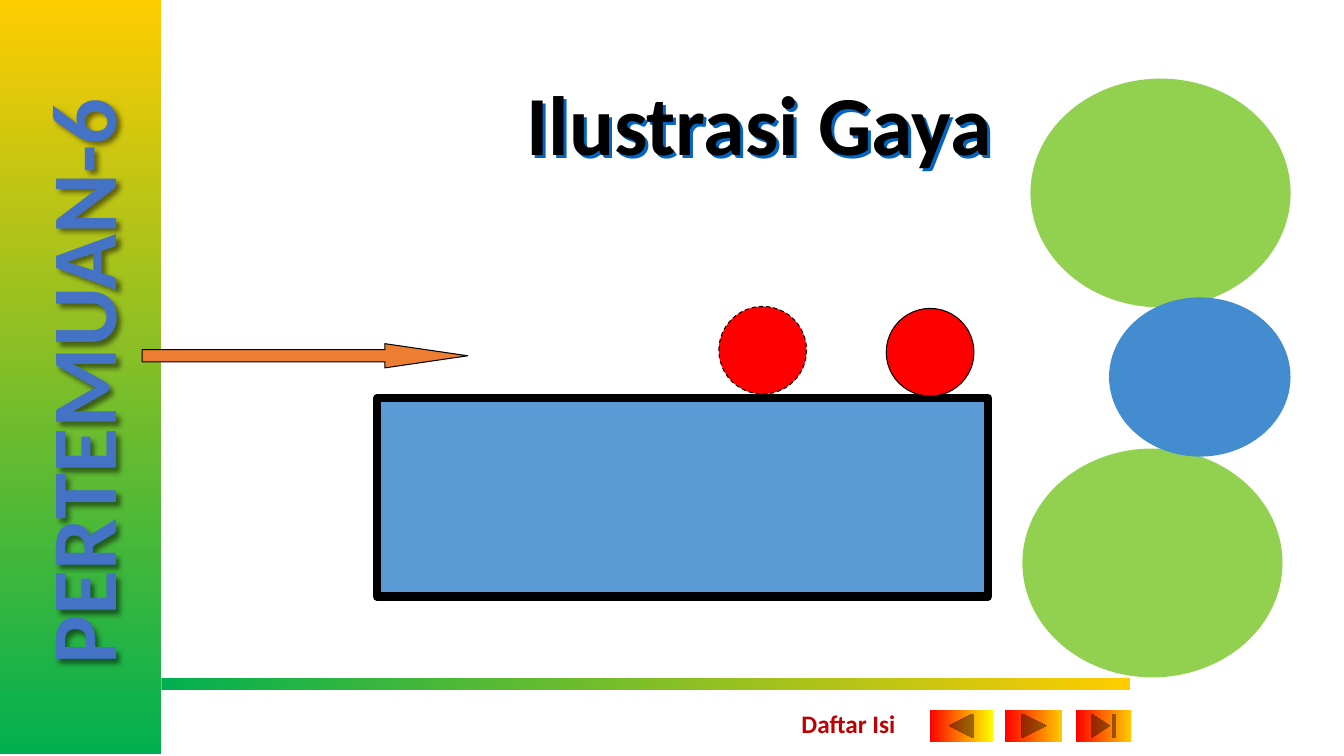
from lxml import etree
from pptx import Presentation
from pptx.dml.color import RGBColor
from pptx.enum.dml import MSO_LINE
from pptx.enum.shapes import MSO_SHAPE
from pptx.enum.text import MSO_ANCHOR, MSO_AUTO_SIZE, PP_ALIGN
from pptx.oxml.ns import qn
from pptx.util import Inches, Pt

RECTANGLE, OVAL, ARROW = MSO_SHAPE.RECTANGLE, MSO_SHAPE.OVAL, MSO_SHAPE.RIGHT_ARROW
BACK = MSO_SHAPE.ACTION_BUTTON_BACK_OR_PREVIOUS
NEXT = MSO_SHAPE.ACTION_BUTTON_FORWARD_OR_NEXT
END = MSO_SHAPE.ACTION_BUTTON_END
DASH = MSO_LINE.DASH
LEFT, CENTER, RIGHT = PP_ALIGN.LEFT, PP_ALIGN.CENTER, PP_ALIGN.RIGHT
BOTTOM, TOP = MSO_ANCHOR.BOTTOM, MSO_ANCHOR.TOP
GROW = MSO_AUTO_SIZE.SHAPE_TO_FIT_TEXT

THEME = {
    "font": "Calibri",
    "sizes": {"sidebar": 66, "title": 60, "contents": 18},
    "black": "000000", "white": "FFFFFF", "title shadow": "0563C1",
    "sidebar text": "4472C4", "contents text": "C00000",
    "green": "92D050", "blue": "438CCF",
    "table": "5B9BD5", "ball": "FF0000", "force": "ED7D31",
    "frame": ("00B050", "FFCC00"),
    "button": ("FF0000", "FFCC00"), "back button": ("FF0000", "FFFF00"),
}

SIDEBAR_TEXT = "PERTEMUAN-6"
TITLE = "Ilustrasi Gaya"
CONTENTS_LABEL = "Daftar Isi"

# Boxes are left, top, width, height in inches.
SIDEBAR = (-2.96, 2.93, 7.5, 1.61)
SIDEBAR_LABEL = (-2.15, 3.18, 5.88, 1.21)
FOOTER_BAR = (1.6, 6.73, 9.61, 0.12)
TITLE_BOX = (0.94, 0.52, 9, 1.25)
CONTENTS_BOX = (7.85, 6.98, 1.15, 0.4)
TABLE = (3.74, 3.95, 6.06, 1.97)
FORCE = (1.41, 3.41, 3.23, 0.24)
BALL_SIZE = 0.87
FIRST_BALL, SECOND_BALL = (7.13, 3.04), (8.79, 3.06)
CIRCLES = [
    ((10.14, 4.45, 2.58, 2.27), "green"),
    ((10.22, 0.78, 2.58, 2.27), "green"),
    ((11, 2.95, 1.8, 1.58), "blue"),
]
BUTTON_TOP, BUTTON_HEIGHT = 7.04, 0.32
BUTTONS = [  # kind, left, width, fill
    (NEXT, 9.97, 0.57, "button"),
    (END, 10.67, 0.55, "button"),
    (BACK, 9.22, 0.63, "back button"),
]


def rgb(name):
    return RGBColor.from_string(THEME[name])


def add_figure(slide, kind, box, fill, line_width=0, dash=None, rotation=0):
    shape = slide.shapes.add_shape(kind, *map(Inches, box))
    shape.shadow.inherit = False
    shape.rotation = rotation
    if isinstance(THEME[fill], tuple):
        shape.fill.gradient()
        shape.fill.gradient_angle = 0
        for stop, color in zip(shape.fill.gradient_stops, THEME[fill]):
            stop.color.rgb = RGBColor.from_string(color)
    else:
        shape.fill.solid()
        shape.fill.fore_color.rgb = rgb(fill)
    if line_width:
        shape.line.color.rgb = rgb("black")
        shape.line.width = Pt(line_width)
        if dash:
            shape.line.dash_style = dash
    else:
        shape.line.fill.background()
    return shape


def add_label(slide, box, text, size, color, align=LEFT, anchor=TOP, wrap=False):
    label = slide.shapes.add_textbox(*map(Inches, box))
    frame = label.text_frame
    frame.text = text
    frame.word_wrap = wrap
    frame.vertical_anchor = anchor
    if not wrap:
        frame.auto_size = GROW
    para = frame.paragraphs[0]
    para.alignment = align
    font = para.runs[0].font
    font.name, font.size, font.bold = THEME["font"], Pt(THEME["sizes"][size]), True
    font.color.rgb = rgb(color)
    return label


def add_solid_fill(parent, color):
    fill = etree.SubElement(parent, qn("a:solidFill"))
    return etree.SubElement(fill, qn("a:srgbClr"), val=THEME[color])


def cast_shadow(label, color, distance, blur=0, opacity=100):
    """Give the text of an unfilled box a shadow towards the lower right."""
    effects = etree.SubElement(label._element.spPr, qn("a:effectLst"))
    shadow = etree.SubElement(
        effects, qn("a:outerShdw"), blurRad=str(Pt(blur)), dist=str(Pt(distance)),
        dir=str(45 * 60000), algn="tl", rotWithShape="0")
    tint = etree.SubElement(shadow, qn("a:srgbClr"), val=THEME[color])
    etree.SubElement(tint, qn("a:alpha"), val=str(opacity * 1000))


def outline_text(label, color, width):
    properties = label.text_frame.paragraphs[0].runs[0]._r.get_or_add_rPr()
    line = etree.Element(qn("a:ln"), w=str(Pt(width)))
    add_solid_fill(line, color)
    properties.insert(0, line)


def add_frame(slide):
    add_figure(slide, RECTANGLE, SIDEBAR, "frame", rotation=270)
    label = add_label(slide, SIDEBAR_LABEL, SIDEBAR_TEXT, "sidebar", "sidebar text", CENTER)
    label.rotation = 270
    outline_text(label, "white", 0.75)
    cast_shadow(label, "black", 3, blur=4, opacity=50)
    add_figure(slide, RECTANGLE, FOOTER_BAR, "frame")
    for box, color in CIRCLES:
        add_figure(slide, OVAL, box, color)


def add_illustration(slide):
    title = add_label(slide, TITLE_BOX, TITLE, "title", "black", RIGHT, BOTTOM, wrap=True)
    title.text_frame.paragraphs[0].line_spacing = 0.9
    cast_shadow(title, "title shadow", 3)
    ball = (BALL_SIZE, BALL_SIZE)
    add_figure(slide, RECTANGLE, TABLE, "table", 6)
    add_figure(slide, OVAL, FIRST_BALL + ball, "ball", 0.75, DASH)
    force = add_figure(slide, ARROW, FORCE, "force", 0.75)
    force.adjustments[0], force.adjustments[1] = 0.5, 3.42
    add_figure(slide, OVAL, SECOND_BALL + ball, "ball", 0.75)


def add_navigation(slide):
    for kind, left, width, fill in BUTTONS:
        add_figure(slide, kind, (left, BUTTON_TOP, width, BUTTON_HEIGHT), fill)
    add_label(slide, CONTENTS_BOX, CONTENTS_LABEL, "contents", "contents text")


def main():
    deck = Presentation()
    deck.slide_width, deck.slide_height = Inches(13.33), Inches(7.5)
    page = deck.slides.add_slide(deck.slide_layouts[6])
    add_frame(page)
    add_illustration(page)
    add_navigation(page)
    deck.save("out.pptx")


if __name__ == "__main__":
    main()
